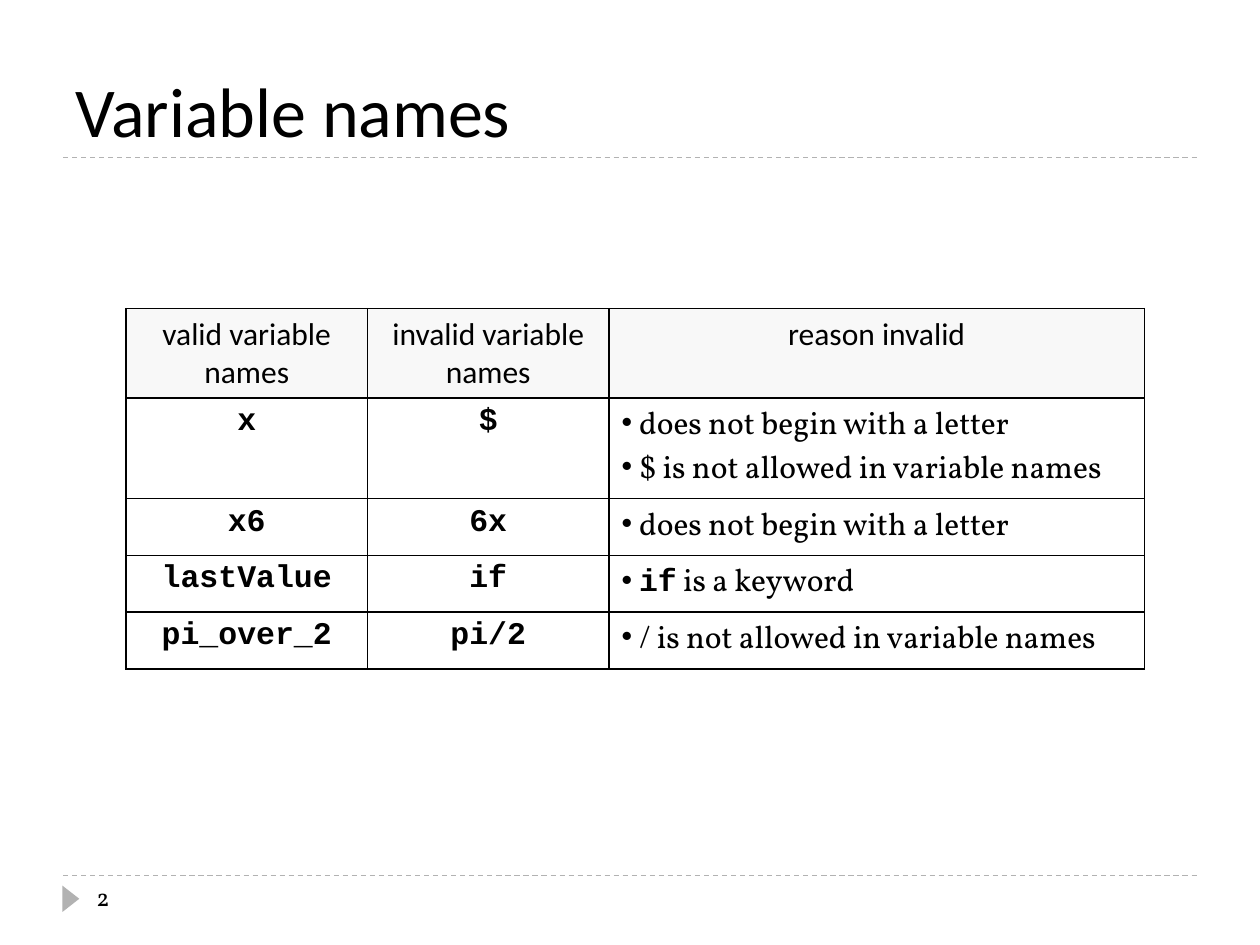
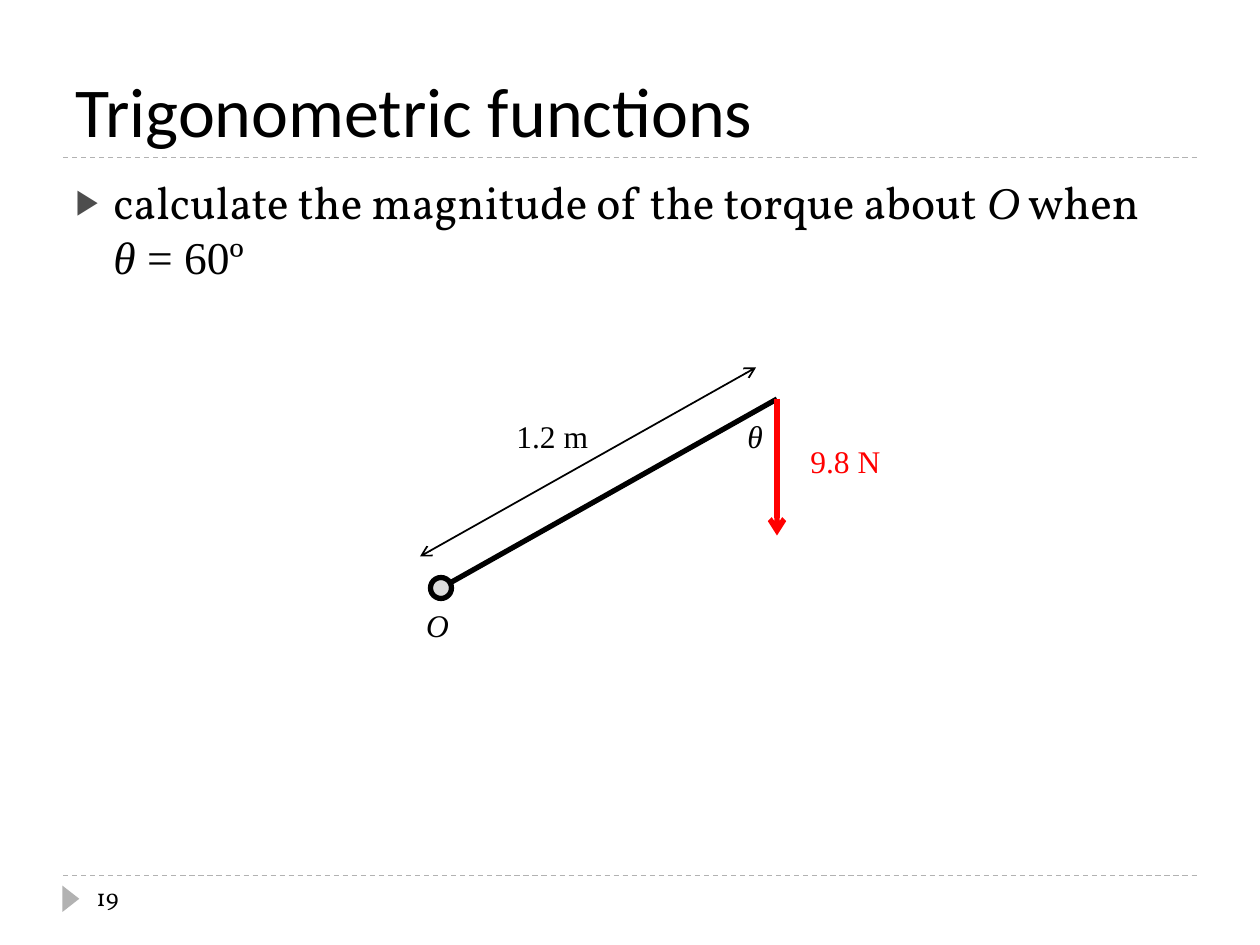
"""Build two lecture slides: a table of variable names and a torque exercise."""
from lxml.etree import SubElement
from pptx import Presentation
from pptx.dml.color import RGBColor
from pptx.enum.dml import MSO_LINE
from pptx.enum.shapes import MSO_CONNECTOR, MSO_SHAPE
from pptx.enum.text import MSO_ANCHOR, MSO_AUTO_SIZE, PP_ALIGN
from pptx.oxml import parse_xml
from pptx.oxml.ns import nsdecls, qn
from pptx.util import Pt

PX = 7620
BLACK, WHITE, RED = "000000", "FFFFFF", "FF0000"
RULE_GREY, HEADER_GREY, PIVOT_GREY, BULLET_GREY = "B2B2B2", "F8F8F8", "DDDDDD", "4D4D4D"
HEADING, SERIF, CODE, MATH = "Calibri", "Vollkorn", "Courier New", "Times New Roman"
hex_color = RGBColor.from_string


def write(paragraph, pieces, size, color=BLACK):
    for text, font, *styles in pieces:
        run = paragraph.add_run()
        run.text = text
        run.font.name = font
        run.font.size = Pt(size)
        run.font.bold = "bold" in styles
        run.font.italic = "italic" in styles
        run.font.color.rgb = hex_color(color)


def draw_line(slide, ends, color, width, dash=None, arrows=()):
    line = slide.shapes.add_connector(MSO_CONNECTOR.STRAIGHT, *[v * PX for v in ends])
    line.line.color.rgb = hex_color(color)
    line.line.width = Pt(width)
    if dash:
        line.line.dash_style = dash
    properties = line._element.spPr
    for arrow in arrows:
        SubElement(properties.find(qn("a:ln")), qn(f"a:{arrow}"), type="arrow")
    SubElement(properties, qn("a:effectLst"))


deck = Presentation()
deck.slide_width, deck.slide_height = 1200 * PX, 900 * PX

slides = []
for heading, number, layout in [
    ("Variable names", "2", 5),
    ("Trigonometric functions", "19", 1),
]:
    slide = deck.slides.add_slide(deck.slide_layouts[layout])
    slides.append(slide)
    for y in (834, 150):
        draw_line(slide, (60, y, 1140, y), RULE_GREY, 0.75, MSO_LINE.DASH)
    marker = slide.shapes.add_shape(
        MSO_SHAPE.ISOSCELES_TRIANGLE, 55 * PX, 848 * PX, 25 * PX, 16 * PX)
    marker.rotation = 90
    marker.shadow.inherit = False
    marker.fill.solid()
    marker.fill.fore_color.rgb = hex_color(RULE_GREY)
    marker.line.fill.background()

    title = slide.shapes.title
    title.left, title.top, title.width, title.height = [v * PX for v in (60, 20, 1080, 130)]
    title.text_frame.auto_size = MSO_AUTO_SIZE.NONE
    title.text_frame.vertical_anchor = MSO_ANCHOR.BOTTOM
    title.text_frame.paragraphs[0].alignment = PP_ALIGN.LEFT
    write(title.text_frame.paragraphs[0], [(heading, HEADING)], 40)

    page = slide.shapes.add_textbox(80 * PX, 834 * PX, 260 * PX, 48 * PX)
    page.text_frame.word_wrap = True
    write(page.text_frame.paragraphs[0], [(number, SERIF)], 14)

names_slide, torque_slide = slides

headers = ["valid variable names", "invalid variable names", "reason invalid"]
no_letter = [(" does not begin with a letter", SERIF)]
examples = [
    ("x", "$", [no_letter, [(" $ is not allowed in variable names", SERIF)]]),
    ("x6", "6x", [no_letter]),
    ("lastValue", "if", [[(" ", SERIF), ("if", CODE, "bold"), (" is a keyword", SERIF)]]),
    ("pi_over_2", "pi/2", [[(" / is not allowed in variable names", SERIF)]]),
]
rows = [[[[(header, HEADING)]] for header in headers]]
for valid, invalid, reasons in examples:
    rows.append([[[(valid, CODE, "bold")]], [[(invalid, CODE, "bold")]], reasons])

names = names_slide.shapes.add_table(
    len(rows), len(headers), 120 * PX, 294 * PX, 970 * PX, 343 * PX).table
names.first_row = names.horz_banding = False
for column, width in zip(names.columns, (230, 230, 510)):
    column.width = width * PX
for row, height in zip(names.rows, (85, 96, 54, 54, 54)):
    row.height = height * PX

for r, row in enumerate(rows):
    for c, lines in enumerate(row):
        cell = names.cell(r, c)
        cell.fill.solid()
        cell.fill.fore_color.rgb = hex_color(WHITE if r else HEADER_GREY)
        for position, side in enumerate(("lnL", "lnR", "lnT", "lnB")):
            cell._tc.tcPr.insert(position, parse_xml(
                f'<a:{side} {nsdecls("a")} w="12700"><a:solidFill>'
                f'<a:srgbClr val="{BLACK}"/></a:solidFill></a:{side}>'))
        for i, pieces in enumerate(lines):
            frame = cell.text_frame
            paragraph = frame.add_paragraph() if i else frame.paragraphs[0]
            write(paragraph, pieces, 18)
            if r and c == 2:
                SubElement(paragraph._p.get_or_add_pPr(), qn("a:buChar"), char="•")
            else:
                paragraph.alignment = PP_ALIGN.CENTER

task = torque_slide.placeholders[1]
task.left, task.top, task.width, task.height = [v * PX for v in (60, 160, 1080, 648)]
task.text_frame.auto_size = MSO_AUTO_SIZE.NONE
question = task.text_frame.paragraphs[0]
write(question, [("calculate the magnitude of the torque about ", SERIF),
                 ("O", MATH, "italic"), (" when", SERIF)], 26)
question.add_line_break()
write(question, [("θ", MATH, "italic"), (" = 60º", MATH)], 26)
question.space_before = Pt(6)
bullet = question._p.get_or_add_pPr()
bullet.set("marL", str(36 * PX))
bullet.set("indent", str(-36 * PX))
SubElement(SubElement(bullet, qn("a:buClr")), qn("a:srgbClr"), val=BULLET_GREY)
SubElement(bullet, qn("a:buSzPct"), val="76000")
SubElement(bullet, qn("a:buChar"), char="▶")

draw_line(torque_slide, (420, 560, 740, 380), BLACK, 3)
pivot = torque_slide.shapes.add_shape(
    MSO_SHAPE.OVAL, 410 * PX, 550 * PX, 20 * PX, 20 * PX)
pivot.shadow.inherit = False
pivot.fill.solid()
pivot.fill.fore_color.rgb = hex_color(PIVOT_GREY)
pivot.line.color.rgb = hex_color(BLACK)
pivot.line.width = Pt(3)
draw_line(torque_slide, (740, 380, 740, 510), RED, 3, arrows=["tailEnd"])
draw_line(torque_slide, (400, 530, 720, 350), BLACK, 1, arrows=["headEnd", "tailEnd"])

for piece, left, top, width, color in [
    (("1.2 m", MATH), 480, 391, 94, BLACK),
    (("9.8 N", MATH), 760, 415, 91, RED),
    (("θ", MATH, "italic"), 700, 391, 40, BLACK),
    (("O", MATH, "italic"), 394, 571, 46, BLACK),
]:
    label = torque_slide.shapes.add_textbox(left * PX, top * PX, width * PX, 48 * PX)
    label.text_frame.word_wrap = False
    label.text_frame.auto_size = MSO_AUTO_SIZE.SHAPE_TO_FIT_TEXT
    write(label.text_frame.paragraphs[0], [piece], 18, color)

deck.save("out.pptx")
